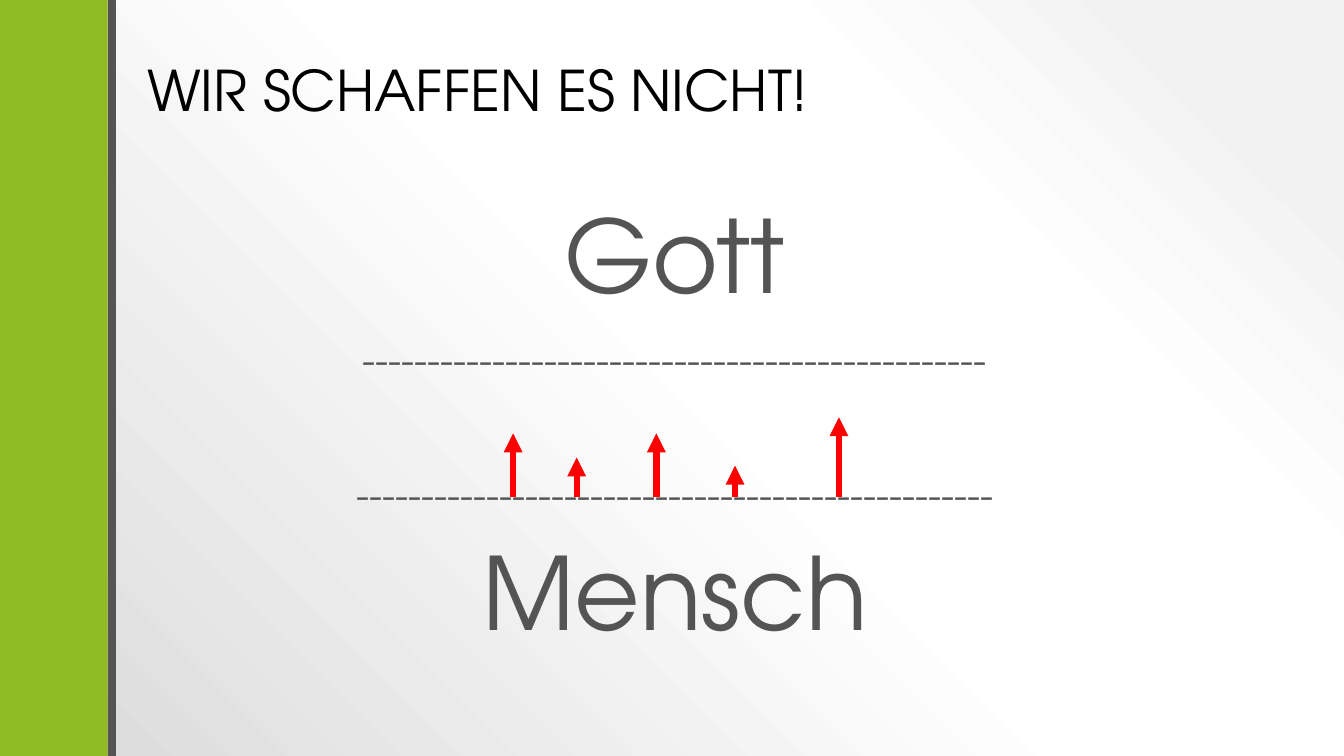
from dataclasses import dataclass

from pptx import Presentation
from pptx.dml.color import RGBColor
from pptx.enum.shapes import MSO_CONNECTOR, MSO_SHAPE
from pptx.enum.text import MSO_ANCHOR, MSO_AUTO_SIZE, PP_ALIGN
from pptx.oxml import parse_xml
from pptx.oxml.ns import nsdecls, qn
from pptx.util import Inches, Pt

LINE, RECT = MSO_CONNECTOR.STRAIGHT, MSO_SHAPE.RECTANGLE
TOP, BOTTOM = MSO_ANCHOR.TOP, MSO_ANCHOR.BOTTOM
LEFT, CENTER = PP_ALIGN.LEFT, PP_ALIGN.CENTER
FIXED = MSO_AUTO_SIZE.NONE


@dataclass(frozen=True)
class Theme:
    font: str = "TeX Gyre Adventor"
    black: str = "000000"
    gray: str = "545454"
    green: str = "90BB23"
    red: str = "FF0000"
    head: int = 40
    big: int = 72
    dash: int = 28
    arrow: float = 4.5
    glow: tuple = ((10, "F2F2F2"), (28, "FFFFFF"), (48, "FFFFFF"), (100, "D9D9D9"))


def apply(item, style):
    for name, value in style.items():
        setattr(item, name, value)


class Page:
    """One slide on a grid of 100 columns by 100 rows."""

    def __init__(self, deck, theme):
        self.theme = theme
        self.col, self.row = deck.slide_width / 100, deck.slide_height / 100
        self.slide = deck.slides.add_slide(deck.slide_layouts[1])
        self.shapes = self.slide.shapes

    def place(self, x, y, w=0, h=0):
        return [round(n) for n in (x * self.col, y * self.row, w * self.col, h * self.row)]

    def ground(self):
        self.slide.background.fill.solid()
        props = self.slide.element.find(".//" + qn("p:bgPr"))
        stops = "".join(
            f'<a:gs pos="{pos * 1000}"><a:srgbClr val="{color}"/></a:gs>'
            for pos, color in self.theme.glow)
        props.replace(props[0], parse_xml(
            f'<a:gradFill {nsdecls("a")} rotWithShape="1"><a:gsLst>{stops}</a:gsLst>'
            '<a:path path="circle"><a:fillToRect l="100000" b="100000"/></a:path>'
            '</a:gradFill>'))

    def text(self, holder, box, anchor, color, align, lines, indent=None):
        """Fill a placeholder; each line is (text, size, space before)."""
        apply(holder, dict(zip(("left", "top", "width", "height"), self.place(*box))))
        frame = holder.text_frame
        apply(frame, {"word_wrap": True, "auto_size": FIXED, "vertical_anchor": anchor})
        for i, (words, size, gap) in enumerate(lines):
            para = frame.add_paragraph() if i else frame.paragraphs[0]
            apply(para, {"alignment": align, "line_spacing": 0.9, "space_before": Pt(gap)})
            props = para._p.get_or_add_pPr()
            if indent:
                props.set("marL", str(Inches(indent[0])))
                props.set("indent", str(Inches(indent[1])))
            props.append(parse_xml(f'<a:buNone {nsdecls("a")}/>'))
            run = para.add_run()
            run.text = words
            apply(run.font, {"name": self.theme.font, "size": Pt(size)})
            run.font.color.rgb = RGBColor.from_string(color)

    def arrow(self, x, base, rise):
        start, end = self.place(x, base)[:2], self.place(x, base - rise)[:2]
        arrow = self.shapes.add_connector(LINE, *start, *end)
        arrow.line.width = Pt(self.theme.arrow)
        arrow.line.color.rgb = RGBColor.from_string(self.theme.red)
        arrow.line._get_or_add_ln().append(
            parse_xml(f'<a:tailEnd {nsdecls("a")} type="triangle"/>'))
        arrow._element.spPr.append(parse_xml(f'<a:effectLst {nsdecls("a")}/>'))

    def bar(self, box, color):
        bar = self.shapes.add_shape(RECT, *self.place(*box))
        bar.shadow.inherit = False
        bar.fill.solid()
        bar.fill.fore_color.rgb = RGBColor.from_string(color)
        bar.line.fill.background()


def main():
    deck = Presentation()
    apply(deck, {"slide_width": Inches(13.33), "slide_height": Inches(7.5)})
    theme = Theme()
    page = Page(deck, theme)
    page.ground()

    # Title and body
    title, body = page.slide.placeholders
    page.text(title, (10.2, -2.27, 80.04, 19.33), BOTTOM, theme.black, LEFT,
              [("WIR SCHAFFEN ES NICHT!", theme.head, 0)])
    page.text(body, (10, 26.67, 80.04, 63.33), TOP, theme.gray, CENTER, [
        ("Gott", theme.big, 18),
        ("-" * 48, theme.dash, 18),
        ("-" * 49, theme.dash, 66.2),
        ("Mensch", theme.big, 18),
    ], indent=(0.3, -0.25))

    # Arrows that rise from the lower line
    for x, rise in ((48.84, 8.4), (42.91, 5.2), (38.18, 8.4), (62.42, 10.53), (54.69, 4.13)):
        page.arrow(x, 65.73, rise)

    # Side bars
    page.bar((-0.83, -1.47, 8.85, 101.47), theme.green)
    page.bar((8.03, -1.47, 0.6, 101.87), theme.gray)

    deck.save("out.pptx")


if __name__ == "__main__":
    main()
